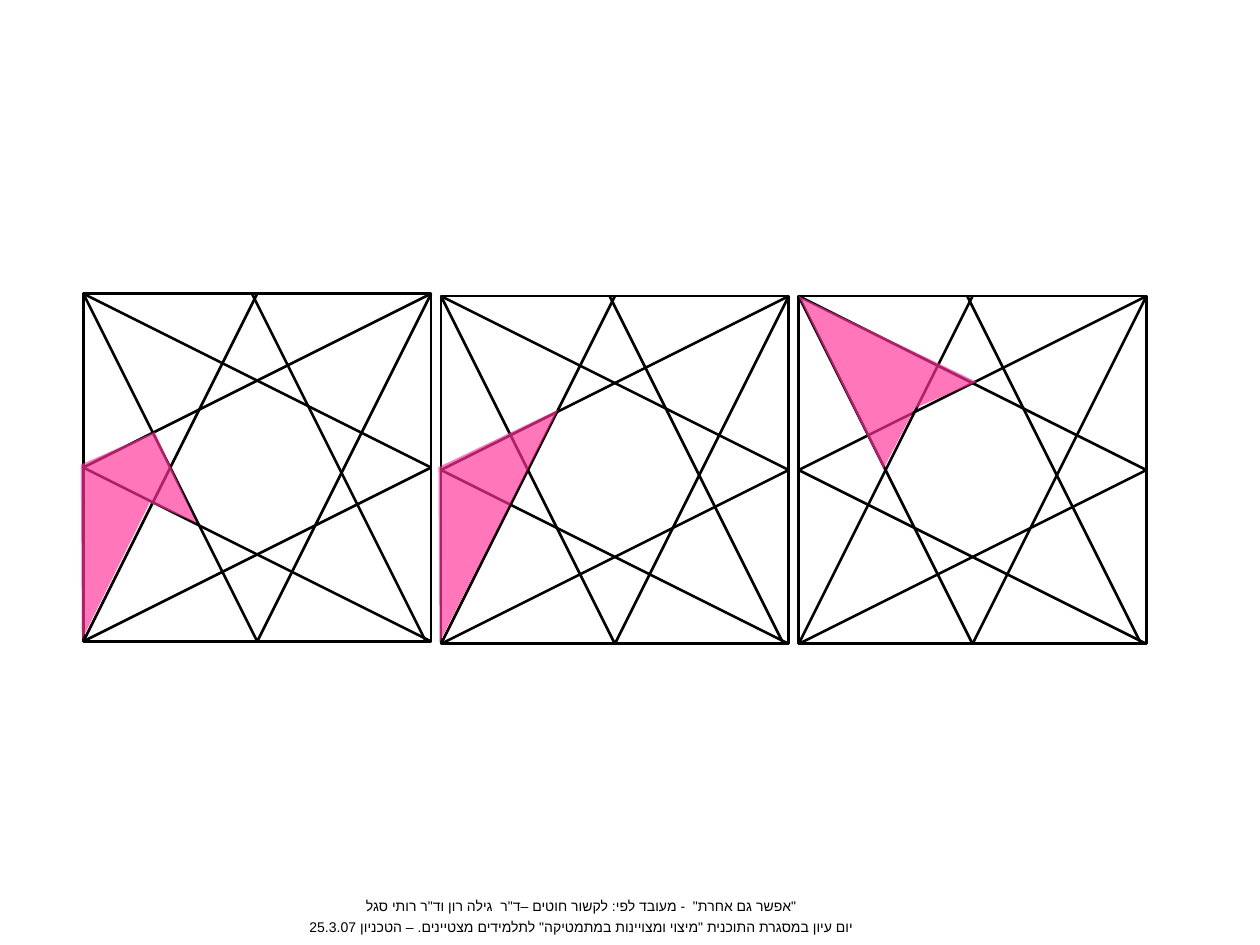
from pptx import Presentation
from pptx.dml.color import RGBColor
from pptx.enum.shapes import MSO_CONNECTOR, MSO_SHAPE
from pptx.enum.text import MSO_AUTO_SIZE, PP_ALIGN
from pptx.oxml.ns import qn
from pptx.oxml.xmlchemy import OxmlElement
from pptx.util import Cm, Pt

COLORS = {"line": "000000", "text": "000000", "highlight": "FF3399"}
FONT = "Arial"
CREDITS = [
    '"אפשר גם אחרת"  - מעובד לפי: לקשור חוטים –ד"ר  גילה רון וד"ר רותי סגל',
    'יום עיון במסגרת התוכנית "מיצוי ומצויינות במתמטיקה" לתלמידים מצטיינים. – הטכניון 25.3.07',
]

# Star lines as fractions of the square's side
STAR_LINES = [
    ((0, 0), (1, 0.5)),
    ((0, 0.5), (1, 0)),
    ((0, 1), (1, 0.5)),
    ((0, 0.5), (1, 1)),
    ((0.5, 1), (1, 0)),
    ((0, 0), (0.5, 1)),
    ((0.5, 0), (0, 1)),
    ((0.485, 0), (0.985, 1)),
]
SIDE_MIDDLES = {(0.5, 0): 0, (0, 0.5): 1, (0.5, 1): 2, (1, 0.5): 3}

# Top of each square and corners of its highlighted area, in cm
SQUARES = [
    (5.92, [(1.65, 12.9), (1.63, 9.37), (3.12, 8.71), (3.96, 10.54), (3.02, 10.13)]),
    (5.97, [(8.86, 12.95), (8.84, 9.42), (11.25, 8.26)]),
    (5.97, [(17.81, 9.45), (16.1, 5.97), (19.69, 7.7), (18.44, 8.23)]),
]
FIRST_LEFT, STEP, SIDE = 1.68, 7.21, 7.01


def rgb(name):
    return RGBColor.from_string(COLORS[name])


def style_line(sp):
    sp.line.color.rgb = rgb("line")
    sp.line.width = Pt(1.5)


def add_star(shapes, left, top):
    group = shapes.add_group_shape().shapes
    square = group.add_shape(MSO_SHAPE.RECTANGLE, Cm(left), Cm(top), Cm(SIDE), Cm(SIDE))
    square.fill.background()
    square.shadow.inherit = False
    style_line(square)
    for start, end in STAR_LINES:
        x1, y1, x2, y2 = (Cm(origin + SIDE * part) for origin, part in
                          zip((left, top) * 2, start + end))
        line = group.add_connector(MSO_CONNECTOR.STRAIGHT, x1, y1, x2, y2)
        style_line(line)
        line._element.spPr.append(OxmlElement("a:effectLst"))
        if start in SIDE_MIDDLES:
            line.begin_connect(square, SIDE_MIDDLES[start])
        if end in SIDE_MIDDLES:
            line.end_connect(square, SIDE_MIDDLES[end])


def add_highlight(shapes, corners):
    points = [(Cm(x), Cm(y)) for x, y in corners]
    builder = shapes.build_freeform(*points[0])
    builder.add_line_segments(points[1:], close=True)
    sp = builder.convert_to_shape()
    sp.shadow.inherit = False
    sp.line.fill.background()
    sp.fill.solid()
    sp.fill.fore_color.rgb = rgb("highlight")
    alpha = OxmlElement("a:alpha")
    alpha.set("val", "67000")
    sp._element.spPr.find(qn("a:solidFill"))[0].append(alpha)


def add_credits(shapes):
    tf = shapes.add_textbox(Cm(2.39), Cm(17.96), Cm(18.67), Cm(1.04)).text_frame
    tf.word_wrap = True
    tf.auto_size = MSO_AUTO_SIZE.SHAPE_TO_FIT_TEXT
    for i, text in enumerate(CREDITS):
        p = tf.add_paragraph() if i else tf.paragraphs[0]
        p.text = text
        p.alignment = PP_ALIGN.CENTER
        if i:
            p.space_before = Pt(2.4)
        p.font.size = Pt(8)
        p.font.name = FONT
        p.font.color.rgb = rgb("text")
        # Right-to-left paragraph with a Hebrew font
        pPr = p._p.get_or_add_pPr()
        pPr.set("rtl", "1")
        cs = OxmlElement("a:cs")
        cs.set("typeface", FONT)
        pPr.find(qn("a:defRPr")).append(cs)


def main():
    prs = Presentation()
    prs.slide_width, prs.slide_height = Cm(25.4), Cm(19.05)
    s = prs.slides.add_slide(prs.slide_layouts[6])
    for i, (top, corners) in enumerate(SQUARES):
        add_star(s.shapes, FIRST_LEFT + i * STEP, top)
        add_highlight(s.shapes, corners)
    add_credits(s.shapes)
    prs.save("out.pptx")


if __name__ == "__main__":
    main()
